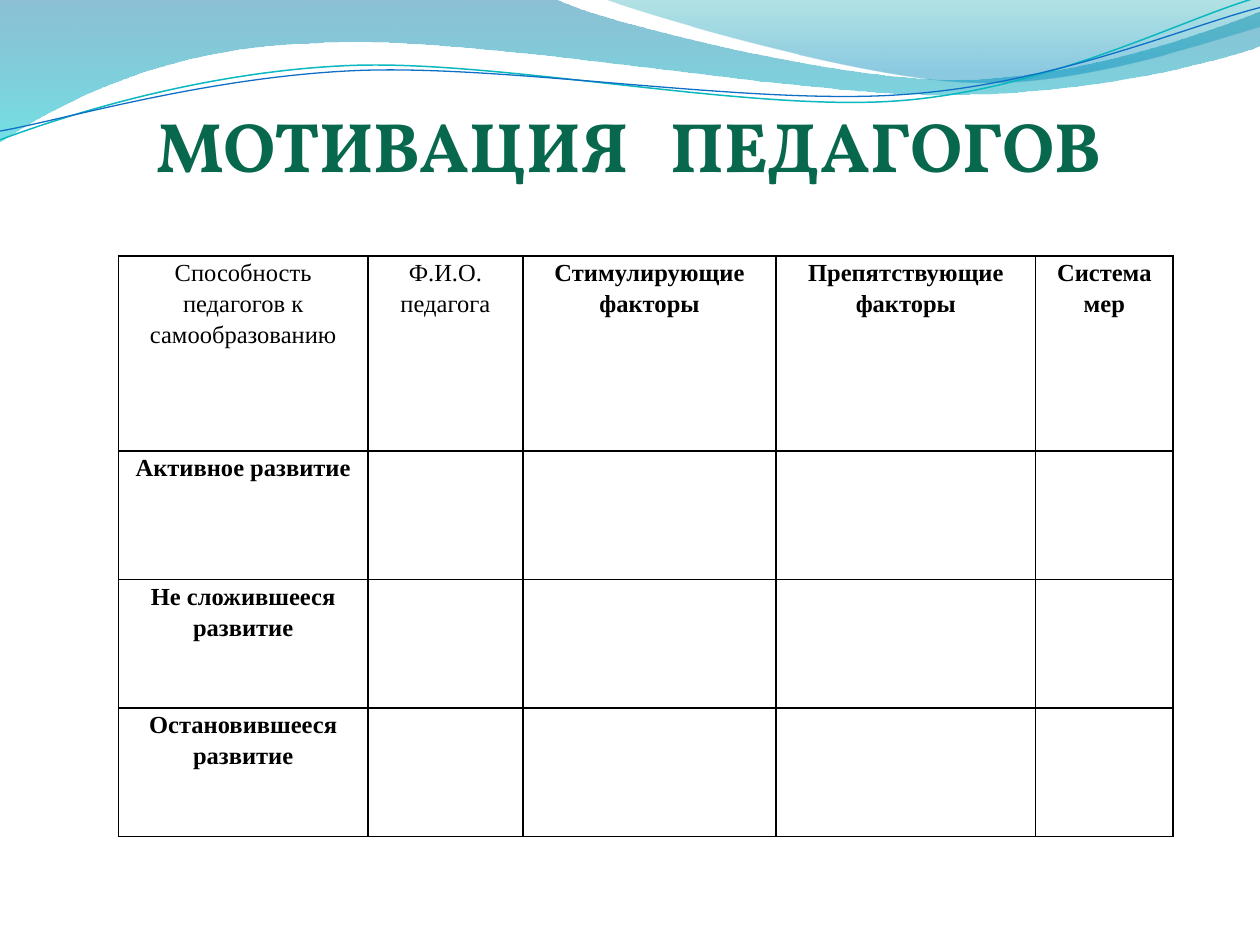
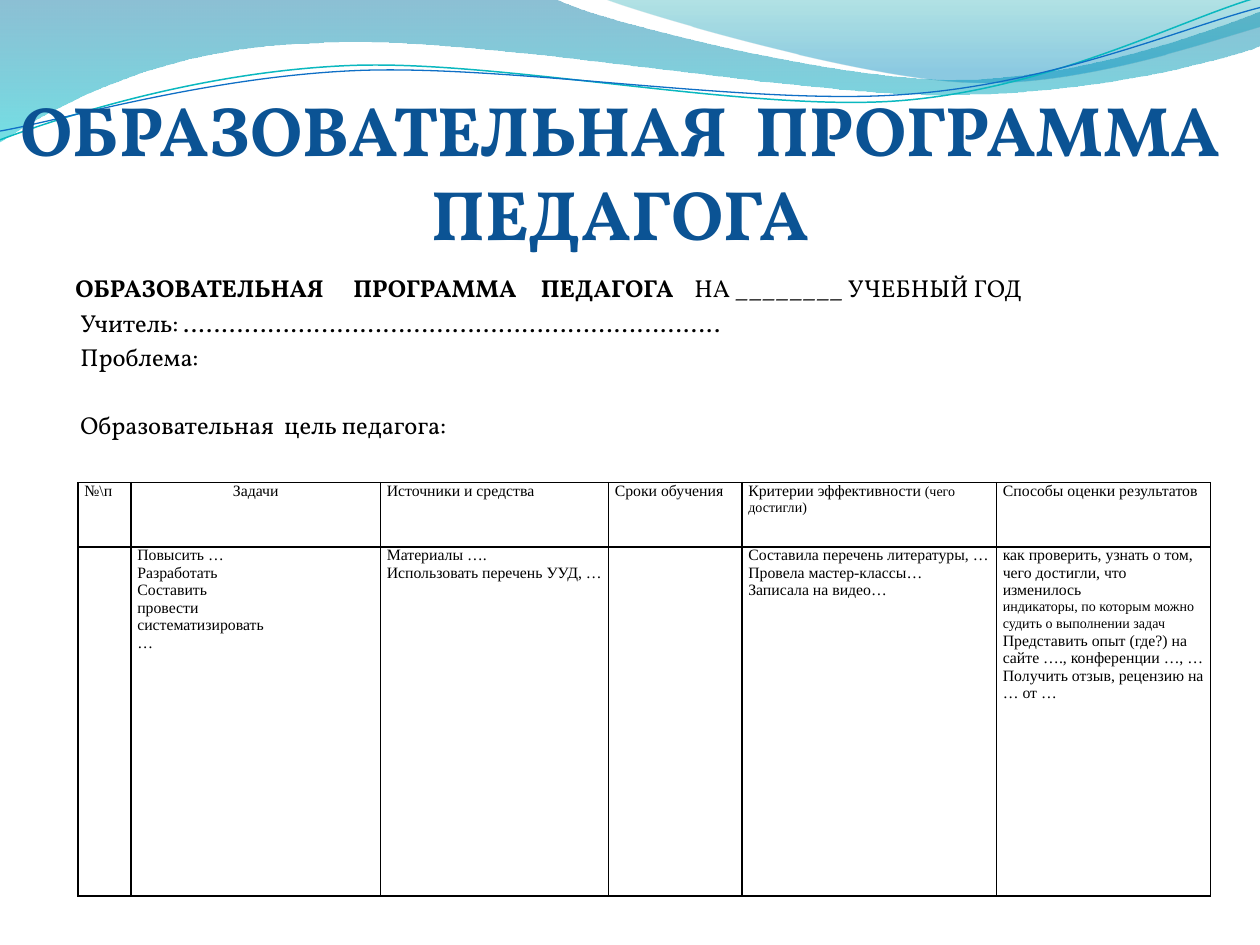
import math

from lxml import etree
from pptx import Presentation
from pptx import util as u
from pptx.dml import color as dml
from pptx.enum import text
from pptx.oxml import ns

BLACK, GREEN, BLUE = "000000", "08684E", "0B5394"
SERIF, DISPLAY = "Times New Roman", "Vollkorn"
LEFT, CENTER = text.PP_ALIGN.LEFT, text.PP_ALIGN.CENTER
WAVE_TILT = 2.7
WAVE_CENTER = (4.99, 0.58)

BANDS = [
    {
        "start": (0, 0),
        "steps": [
            (4.4, -0.01),
            (4.76, 0.17, 6.64, 0.63, 7.58, 0.63),
            (8.53, 0.63, 9.58, 0.26, 10, 0.09),
            (10.01, 0.36),
            (9.83, 0.44, 8.7, 0.76, 7.46, 0.75),
            (6.22, 0.75, 3.82, 0.28, 2.57, 0.34),
            (1.29, 0.36, 0.46, 0.83, -0.01, 1.13),
        ],
        "stops": [(0, "0074A1", 45), (1, "00C6CF", 55)],
    },
    {
        "start": (4.79, -0.01),
        "steps": [
            (5.09, 0.11, 6.82, 0.62, 7.69, 0.65),
            (8.56, 0.69, 9.61, 0.32, 10, 0.21),
            (10, 0),
        ],
        "stops": [(0, "00A1A9", 30), (0.8, "008BBF", 45)],
    },
]
WAVES = [
    {
        "start": (0, 1.11),
        "steps": [
            (0.48, 0.93, 1.58, 0.57, 2.77, 0.52),
            (3.95, 0.47, 5.93, 0.89, 7.13, 0.8),
            (8.33, 0.71, 9.38, 0.15, 9.98, -0.02),
        ],
        "line": ("0AB8BF", 0.85),
    },
    {
        "start": (0, 1.04),
        "steps": [
            (0.47, 0.96, 1.64, 0.61, 2.83, 0.56),
            (4.03, 0.51, 5.97, 0.84, 7.17, 0.75),
            (8.36, 0.67, 9.41, 0.21, 10, 0.06),
        ],
        "line": ("0F6FC6", 0.75),
    },
]


def rgb(code):
    return dml.RGBColor.from_string(code)


def set_all(target, values):
    for name, value in values.items():
        setattr(target, name, value)


def turn(point):
    angle = math.radians(WAVE_TILT)
    dx, dy = (p - c for p, c in zip(point, WAVE_CENTER))
    return (WAVE_CENTER[0] + dx * math.cos(angle) - dy * math.sin(angle),
            WAVE_CENTER[1] + dx * math.sin(angle) + dy * math.cos(angle))


def bend(outline, steps):
    segments = list(outline.element.iter(ns.qn("a:lnTo")))
    for step in steps:
        handles = [segments.pop(0) for _ in range(len(step) // 2)]
        if len(handles) == 3:
            curve = etree.Element(ns.qn("a:cubicBezTo"))
            handles[0].addprevious(curve)
            for handle in handles:
                curve.append(handle[0])
                handle.getparent().remove(handle)


def add_outline(slide, start, steps, close, place=lambda point: point):
    points = [start] + [step[i:i + 2] for step in steps
                        for i in range(0, len(step), 2)]
    corners = [tuple(map(u.Inches, place(point))) for point in points]
    builder = slide.shapes.build_freeform(*corners[0])
    builder.add_line_segments(corners[1:], close=close)
    outline = builder.convert_to_shape()
    outline.shadow.inherit = False
    bend(outline, steps)
    return outline


def add_band(slide, start, steps, stops):
    band = add_outline(slide, start, steps, True)
    band.line.fill.background()
    band.fill.gradient()
    band.fill.gradient_angle = 270
    for stop, (position, code, _) in zip(band.fill.gradient_stops, stops):
        stop.position = position
        stop.color.rgb = rgb(code)
    tints = band.element.spPr.iter(ns.qn("a:srgbClr"))
    for tint, (_, _, opacity) in zip(tints, stops):
        etree.SubElement(tint, ns.qn("a:alpha"), val=str(opacity * 1000))


def add_wave(slide, start, steps, line):
    wave = add_outline(slide, start, steps, False, turn)
    wave.rotation = -WAVE_TILT
    wave.fill.background()
    wave.line.color.rgb = rgb(line[0])
    wave.line.width = u.Pt(line[1])


def add_header(slide):
    for band in BANDS:
        add_band(slide, **band)
    for wave in WAVES:
        add_wave(slide, **wave)


def write_run(paragraph, wording, name, size, color=BLACK, bold=False, gap=0):
    run = paragraph.add_run()
    run.text = wording
    set_all(run.font, {"name": name, "size": u.Pt(size), "bold": bold})
    run.font.color.rgb = rgb(color)
    if gap:
        run._r.get_or_add_rPr().set("spc", str(gap * 100))


def write_paragraphs(frame, paragraphs, style, layout):
    for i, runs in enumerate(paragraphs):
        paragraph = frame.add_paragraph() if i else frame.paragraphs[0]
        set_all(paragraph, layout)
        for run in [runs] if isinstance(runs, str) else runs:
            wording, changes = (run, {}) if isinstance(run, str) else run
            write_run(paragraph, wording, **{**style, **changes})


def add_text(slide, box, paragraphs, style, layout, frame_format):
    frame = slide.shapes.add_textbox(*map(u.Inches, box)).text_frame
    set_all(frame, {"word_wrap": True, **frame_format})
    write_paragraphs(frame, paragraphs, style, layout)
    return frame


def add_title(slide, box, runs, color):
    style = {"name": DISPLAY, "size": 40, "color": color, "bold": True}
    frame_format = {
        "vertical_anchor": text.MSO_ANCHOR.BOTTOM,
        "margin_left": 0, "margin_right": 0,
        "margin_top": u.Inches(0.05), "margin_bottom": 0,
    }
    add_text(slide, box, [runs], style, {"alignment": CENTER}, frame_format)


def draw_borders(cell):
    properties = cell._tc.get_or_add_tcPr()
    for i, side in enumerate(("lnL", "lnR", "lnT", "lnB")):
        border = etree.Element(ns.qn(f"a:{side}"), w=str(u.Pt(1)))
        fill = etree.SubElement(border, ns.qn("a:solidFill"))
        etree.SubElement(fill, ns.qn("a:srgbClr"), val=BLACK)
        properties.insert(i, border)


def add_grid(slide, corner, widths, heights, margin, cell_format):
    size = (sum(widths), sum(heights))
    grid = slide.shapes.add_table(len(heights), len(widths),
                                  *map(u.Inches, corner + size)).table
    set_all(grid, {"first_row": False, "horz_banding": False})
    for column, width in zip(grid.columns, widths):
        column.width = u.Inches(width)
    for row, height in zip(grid.rows, heights):
        row.height = u.Inches(height)
    for r in range(len(heights)):
        for c in range(len(widths)):
            cell = grid.cell(r, c)
            set_all(cell, {"margin_left": u.Inches(margin),
                           "margin_right": u.Inches(margin),
                           "margin_top": 0, "margin_bottom": 0})
            cell.fill.background()
            draw_borders(cell)
            paragraphs, style, layout = cell_format(r, c)
            write_paragraphs(cell.text_frame, paragraphs, style, layout)


def build_motivation(slide):
    add_header(slide)
    add_title(slide, (0.23, 0.77, 9.53, 0.71),
              ["МОТИВАЦИЯ", (" ", {"gap": 16}), "ПЕДАГОГОВ"], GREEN)
    factors = ["Способность педагогов к самообразованию", "Ф.И.О. педагога",
               "Стимулирующие факторы", "Препятствующие факторы", "Система мер"]
    stages = ["Активное развитие", "Не сложившееся развитие",
              "Остановившееся развитие"]

    def cell_format(r, c):
        wording = factors[c] if r == 0 else stages[r - 1] if c == 0 else ""
        style = {"name": SERIF, "size": 14, "bold": r > 0 or c > 1}
        layout = {"alignment": CENTER, "line_spacing": 1.15}
        return [wording] if wording else [], style, layout

    add_grid(slide, (0.94, 2.03), [1.98, 1.23, 2.01, 2.06, 1.09],
             [1.55] + [1.02] * len(stages), 0.07, cell_format)


def add_form(slide):
    bold = {"bold": True}
    heading = [("ОБРАЗОВАТЕЛЬНАЯ", bold), (" ", {"gap": 14}),
               ("ПРОГРАММА", bold), (" ", {"gap": 11}),
               ("ПЕДАГОГА", bold), (" ", {"gap": 9}),
               "НА ________ УЧЕБНЫЙ ГОД"]
    goal = ["Образовательная", (" ", {"gap": 3}), "цель педагога:"]
    fields = ["Учитель: …………………………………………………………….", "Проблема:", goal]
    frame = add_text(slide, (0.5, 2.12, 9, 1.48), [heading] + fields,
                     {"name": DISPLAY, "size": 14},
                     {"alignment": LEFT, "space_before": u.Pt(2.8)}, {})
    for field in frame.paragraphs[1:]:
        field._p.get_or_add_pPr().set("marL", str(u.Inches(0.04)))
    frame.paragraphs[-1].space_before = u.Pt(22)


def build_programme(slide):
    add_header(slide)
    add_title(slide, (0.08, 0.77, 9.69, 1.25),
              ["ОБРАЗОВАТЕЛЬНАЯ", (" ", {"gap": 8}), "ПРОГРАММА ПЕДАГОГА"], BLUE)
    add_form(slide)
    small = {"size": 8}
    plan = [
        [["№\\п"], ["Задачи"], ["Источники и средства"], ["Сроки обучения"],
         [["Критерии эффективности ", ("(чего достигли)", small)]],
         ["Способы оценки результатов"]],
        [[],
         ["Повысить …", "Разработать", "Составить", "провести",
          "систематизировать", "…"],
         ["Материалы ….", "Использовать перечень УУД, …"],
         [],
         ["Составила перечень литературы, …", "Провела мастер-классы…",
          "Записала на видео…"],
         ["как проверить, узнать о том, чего достигли, что изменилось",
          [("индикаторы, по которым можно судить о выполнении задач", small), " "],
          "Представить опыт (где?) на сайте …., конференции …, …",
          "Получить отзыв, рецензию на … от …"]],
    ]

    def cell_format(r, c):
        layout = {"alignment": CENTER if (r, c) == (0, 1) else LEFT}
        return plan[r][c], {"name": SERIF, "size": 9}, layout

    add_grid(slide, (0.62, 3.83), [0.42, 1.98, 1.81, 1.06, 2.02, 1.7],
             [0.51, 2.77], 0.05, cell_format)


def main():
    deck = Presentation()
    set_all(deck, {"slide_width": u.Inches(10), "slide_height": u.Inches(7.5)})
    for build in (build_motivation, build_programme):
        build(deck.slides.add_slide(deck.slide_layouts[6]))
    deck.save("out.pptx")


if __name__ == "__main__":
    main()
